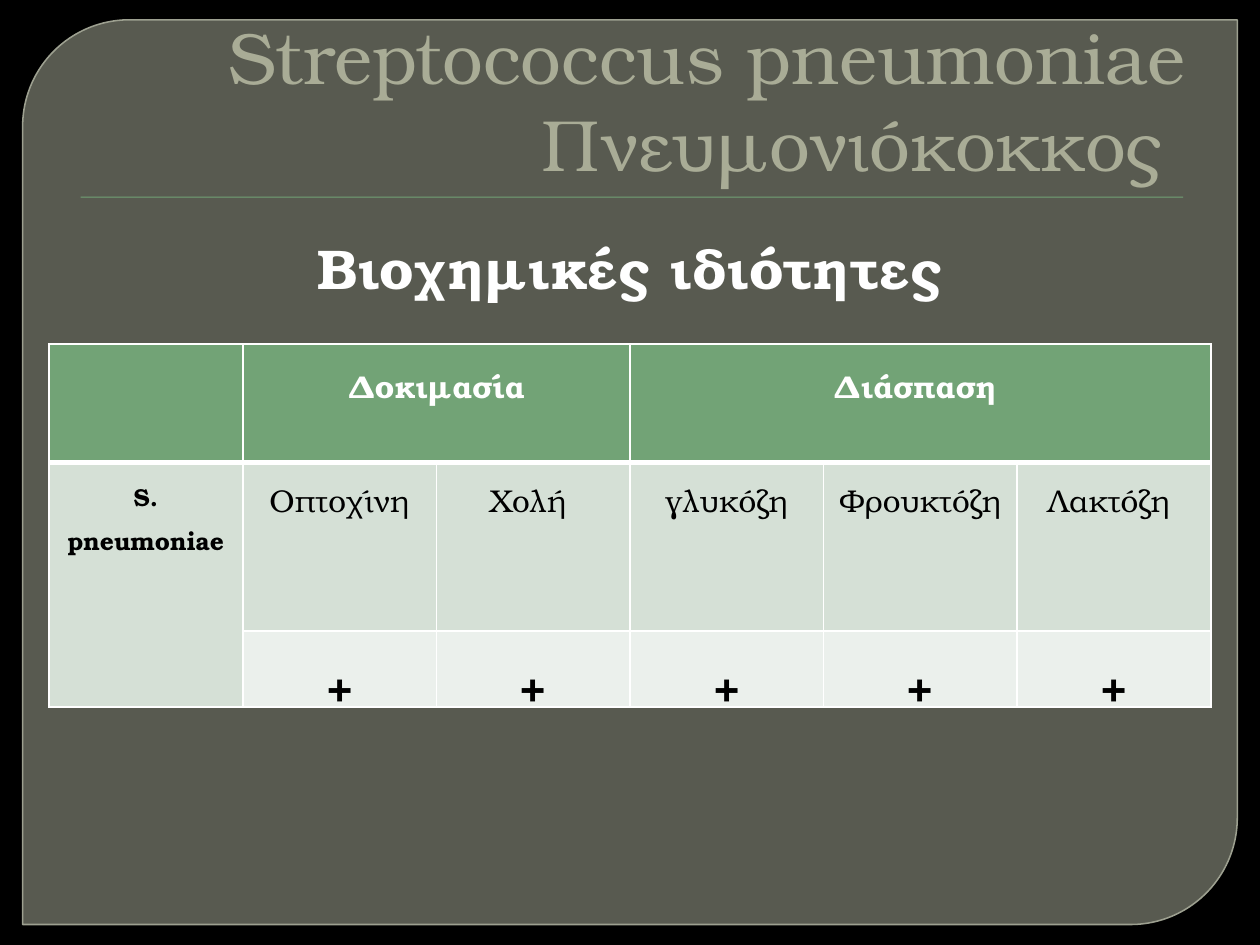
import dataclasses

import pptx
import pptx.dml.color
import pptx.enum.shapes
import pptx.enum.text
import pptx.oxml
import pptx.oxml.ns
import pptx.util

W, H = 10, 7.5
FONT = "TeX Gyre Bonum"
WHITE, BLACK, GREEN = "FFFFFF", "000000", "72A376"
LIGHT, PALE = "D5E0D6", "EBF0EC"
ALIGN = pptx.enum.text.PP_ALIGN
SHAPE = pptx.enum.shapes.MSO_SHAPE
inch = pptx.util.Inches


@dataclasses.dataclass
class Cell:
    row: int
    col: int
    text: str
    fill: str
    size: float = 18
    color: str = BLACK
    bold: bool = False
    rows: int = 1
    cols: int = 1


def rgb(value: str):
    return pptx.dml.color.RGBColor.from_string(value)


def box(x: float, y: float, w: float, h: float) -> tuple:
    return inch(x * W), inch(y * H), inch(w * W), inch(h * H)


def write(tf, text: str, *, size: float, color: str, bold: bool = False,
          align=ALIGN.CENTER, spacing: float = 1) -> None:
    p = tf.paragraphs[0]
    p.alignment = align
    p.line_spacing = spacing
    for i, line in enumerate(text.split("\n")):
        if i:
            p.add_line_break()
        r = p.add_run()
        r.text = line
        r.font.name = FONT
        r.font.size = pptx.util.Pt(size)
        r.font.bold = bold
        r.font.color.rgb = rgb(color)


def set_alpha(color_format_parent, percent: int) -> None:
    for clr in color_format_parent.iter(pptx.oxml.ns.qn("a:srgbClr")):
        alpha = clr.makeelement(pptx.oxml.ns.qn("a:alpha"), {"val": str(percent * 1000)})
        clr.append(alpha)


def add_panel(slide, kind, at: tuple, fill: str):
    sp = slide.shapes.add_shape(kind, *at)
    sp.shadow.inherit = False
    sp.fill.solid()
    sp.fill.fore_color.rgb = rgb(fill)
    sp.line.fill.background()
    return sp


def set_borders(cell, **widths: float) -> None:
    tc_pr = cell._tc.get_or_add_tcPr()
    ns = pptx.oxml.ns.nsdecls("a")
    for i, side in enumerate("LRTB"):
        width = int(pptx.util.Pt(widths.get(side, 1)))
        tc_pr.insert(i, pptx.oxml.parse_xml(
            f'<a:ln{side} {ns} w="{width}"><a:solidFill>'
            f'<a:srgbClr val="{WHITE}"/></a:solidFill></a:ln{side}>'))


def add_grid(slide, at: tuple, row_heights: list[float], n_cols: int,
             cells: list[Cell]) -> None:
    table = slide.shapes.add_table(len(row_heights), n_cols, *at).table
    for row, height in zip(table.rows, row_heights):
        row.height = inch(height)
    for r in range(len(row_heights)):
        for c in range(n_cols):
            set_borders(table.cell(r, c), **[{"B": 3}, {"T": 3}, {}][r])
    for item in cells:
        cell = table.cell(item.row, item.col)
        if item.rows * item.cols > 1:
            cell.merge(table.cell(item.row + item.rows - 1, item.col + item.cols - 1))
        cell.fill.solid()
        cell.fill.fore_color.rgb = rgb(item.fill)
        if item.text:
            write(cell.text_frame, item.text, size=item.size, color=item.color,
                  bold=item.bold, spacing=1.25)


def main() -> None:
    prs = pptx.Presentation()
    prs.slide_width, prs.slide_height = inch(W), inch(H)
    s = prs.slides.add_slide(prs.slide_layouts[5])
    s.background.fill.solid()
    s.background.fill.fore_color.rgb = rgb(BLACK)

    panel = add_panel(s, SHAPE.ROUND_2_DIAG_RECTANGLE, box(0.018, 0.021, 0.964, 0.979 - 0.021), "888B7B")
    panel.height = inch(7.18)
    panel.adjustments[0], panel.adjustments[1] = 0.118, 0
    panel.line.color.rgb = rgb("9DA090")
    panel.line.width = pptx.util.Pt(0.87)
    set_alpha(panel.fill._xPr.find(pptx.oxml.ns.qn("a:solidFill")), 65)
    add_panel(s, SHAPE.RECTANGLE, (inch(0.64), inch(1.56), inch(8.75), inch(0.01)), GREEN)

    title = s.shapes.title
    title.left, title.top, title.width, title.height = box(0.05, 0.037, 0.9, 0.167)
    tf = title.text_frame
    tf.auto_size = pptx.enum.text.MSO_AUTO_SIZE.NONE
    tf.vertical_anchor = pptx.enum.text.MSO_ANCHOR.BOTTOM
    write(tf, "Streptococcus pneumoniae\nΠνευμονιόκοκκος ", size=41.4,
          color="E7EACB", align=ALIGN.RIGHT)

    subtitle = s.shapes.add_textbox(*box(0.05, 0.24, 0.9, 0.66))
    subtitle.text_frame.word_wrap = True
    write(subtitle.text_frame, "Βιοχημικές ιδιότητες", size=32, color=WHITE, bold=True)

    tests = ["Οπτοχίνη", "Χολή ", "γλυκόζη", "Φρουκτόζη ", "Λακτόζη "]
    cells = [
        Cell(0, 0, "", GREEN),
        Cell(0, 1, "Δοκιμασία", GREEN, color=WHITE, bold=True, cols=2),
        Cell(0, 3, "Διάσπαση ", GREEN, color=WHITE, bold=True, cols=3),
        Cell(1, 0, "S. pneumoniae", LIGHT, size=14, bold=True, rows=2),
    ]
    for col, test in enumerate(tests, start=1):
        cells.append(Cell(1, col, test, LIGHT))
        cells.append(Cell(2, col, "+", PALE, size=24, bold=True))
    add_grid(s, box(0.039, 0.364, 0.922, 0.375), [0.94, 1.34, 0.54], 6, cells)

    prs.save("out.pptx")


if __name__ == "__main__":
    main()
